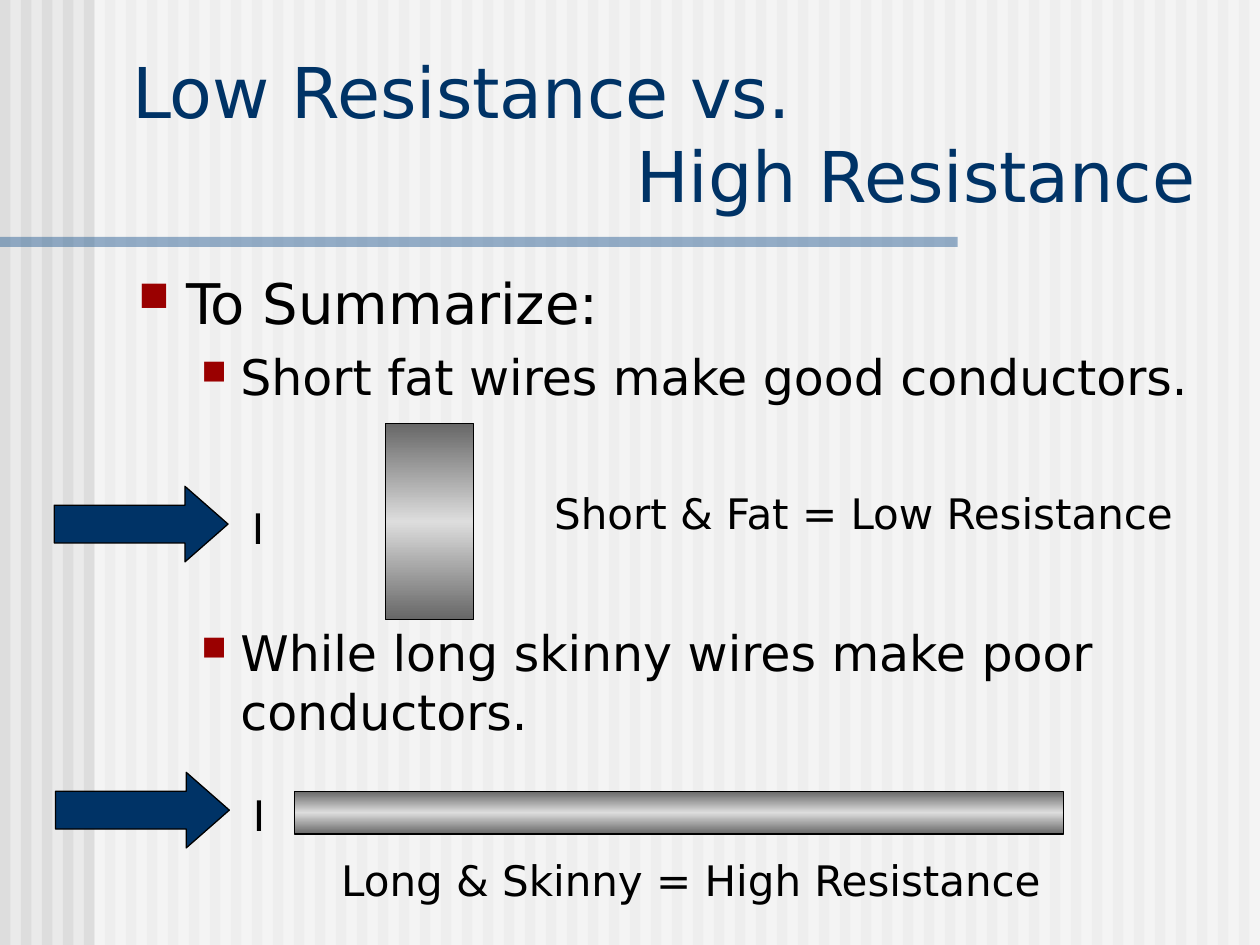
import pptx
import pptx.util
import pptx.dml.color
import pptx.enum.shapes
import pptx.enum.text
import pptx.oxml
import pptx.oxml.ns
import copy

Inches = pptx.util.Inches
Pt = pptx.util.Pt
SHAPE = pptx.enum.shapes.MSO_SHAPE
ANCHOR = pptx.enum.text.MSO_ANCHOR

FONT = "DejaVu Sans"
COLOURS = {
    "background": "EAEAEA", "stripe": "DDDDDD", "veil": "FFFFFF", "rule": "336699",
    "navy": "003366", "bullet": "9A0000", "ink": "000000",
    "metal_dark": "676767", "metal_light": "DDDDDD",
}

TITLE = [
    {"text": "Low Resistance vs.", "size": 40, "colour": "navy"},
    {"text": "High Resistance", "size": 40, "colour": "navy", "margin": 4.0},
]
SUMMARY = [
    {"text": "To Summarize:", "size": 32, "before": 3,
     "margin": 0.38, "hanging": 0.38, "bullet": 75},
    {"text": "Short fat wires make good conductors.", "size": 28, "before": 6.5,
     "margin": 0.81, "hanging": 0.31, "bullet": 70, "level": 1},
    {"text": "While long skinny wires make poor conductors.", "size": 28, "before": 124,
     "margin": 0.81, "hanging": 0.31, "bullet": 70, "level": 1},
]
WIRES = [
    {"wire": (3.06, 3.36, 0.7, 1.56), "arrow": (0.43, 3.86, 1.38, 0.6),
     "current": (1.9, 3.94, 0.34, 0.5),
     "caption": "Short & Fat = Low Resistance", "caption_at": (4.3, 3.82, 5.19, 0.5)},
    {"wire": (2.34, 6.28, 6.1, 0.34), "arrow": (0.44, 6.13, 1.38, 0.6),
     "current": (1.91, 6.22, 0.34, 0.5),
     "caption": "Long & Skinny = High Resistance", "caption_at": (2.61, 6.73, 5.8, 0.5)},
]
STRIPE_COUNT = 60
STRIPE_PITCH = 10 / STRIPE_COUNT


def colour(name):
    return pptx.dml.color.RGBColor.from_string(COLOURS[name])


def add_xml(parent, tag, **attributes):
    child = pptx.oxml.parse_xml(f"<a:{tag} {pptx.oxml.ns.nsdecls('a')}/>")
    for key, value in attributes.items():
        child.set(key, str(value))
    parent.append(child)
    return child


def add_block(page, preset, place, fill=None, opacity=None, outlined=False):
    block = page.shapes.add_shape(preset, *map(Inches, place))
    block.shadow.inherit = False
    if fill:
        block.fill.solid()
        block.fill.fore_color.rgb = colour(fill)
    if opacity:
        tint = block.fill._xPr.find(".//" + pptx.oxml.ns.qn("a:srgbClr"))
        add_xml(tint, "alpha", val=opacity * 1000)
    if outlined:
        block.line.color.rgb = colour("ink")
        block.line.width = Pt(0.75)
    else:
        block.line.fill.background()
    return block


def add_wire(page, place):
    fill = add_block(page, SHAPE.RECTANGLE, place, outlined=True).fill
    fill.gradient()
    fill.gradient_angle = 90
    stop_list = fill._xPr.find(".//" + pptx.oxml.ns.qn("a:gsLst"))
    stop_list.append(copy.deepcopy(stop_list[-1]))
    shades = [(0, "metal_dark"), (0.5, "metal_light"), (1, "metal_dark")]
    for stop, (position, shade) in zip(fill.gradient_stops, shades):
        stop.position = position
        stop.color.rgb = colour(shade)


def add_text(page, place, lines, wrap=True, anchor=ANCHOR.TOP):
    box = page.shapes.add_textbox(*map(Inches, place))
    frame = box.text_frame
    frame.word_wrap = wrap
    frame.vertical_anchor = anchor
    for number, line in enumerate(lines):
        para = frame.add_paragraph() if number else frame.paragraphs[0]
        para.level = line.get("level", 0)
        para.space_before = Pt(line.get("before", 0))
        span = para.add_run()
        span.text = line["text"]
        for key, value in {"name": FONT, "size": Pt(line["size"])}.items():
            setattr(span.font, key, value)
        span.font.color.rgb = colour(line.get("colour", "ink"))
        properties = para._p.get_or_add_pPr()
        properties.set("marL", str(Inches(line.get("margin", 0))))
        properties.set("indent", str(-Inches(line.get("hanging", 0))))
        if "bullet" in line:
            add_xml(add_xml(properties, "buClr"), "srgbClr", val=COLOURS["bullet"])
            add_xml(properties, "buSzPct", val=line["bullet"] * 1000)
            add_xml(properties, "buFont", typeface="Wingdings", charset=2)
            add_xml(properties, "buChar", char="n")


def main():
    deck = pptx.Presentation()
    deck.slide_width, deck.slide_height = Inches(10), Inches(7.5)
    page = deck.slides.add_slide(deck.slide_layouts[6])
    page.background.fill.solid()
    page.background.fill.fore_color.rgb = colour("background")

    for number in range(STRIPE_COUNT):
        place = (number * STRIPE_PITCH, 0, STRIPE_PITCH / 2, 7.5)
        add_block(page, SHAPE.RECTANGLE, place, "stripe")
    add_block(page, SHAPE.RECTANGLE, (0.75, 0, 9.25, 7.5), "veil", opacity=50)
    add_block(page, SHAPE.RECTANGLE, (0, 1.88, 7.6, 0.08), "rule", opacity=50)

    add_text(page, (0.95, 0.34, 8.93, 1.43), TITLE, anchor=ANCHOR.BOTTOM)
    add_text(page, (1, 2.08, 8.87, 5.15), SUMMARY)

    for example in WIRES:
        add_wire(page, example["wire"])
        arrow = add_block(page, SHAPE.RIGHT_ARROW, example["arrow"], "navy", outlined=True)
        arrow.adjustments[0], arrow.adjustments[1] = 0.5, 0.57
        add_text(page, example["current"], [{"text": "I", "size": 24}], wrap=False)
        caption = {"text": example["caption"], "size": 24}
        add_text(page, example["caption_at"], [caption], wrap=False)

    deck.save("out.pptx")


if __name__ == "__main__":
    main()
